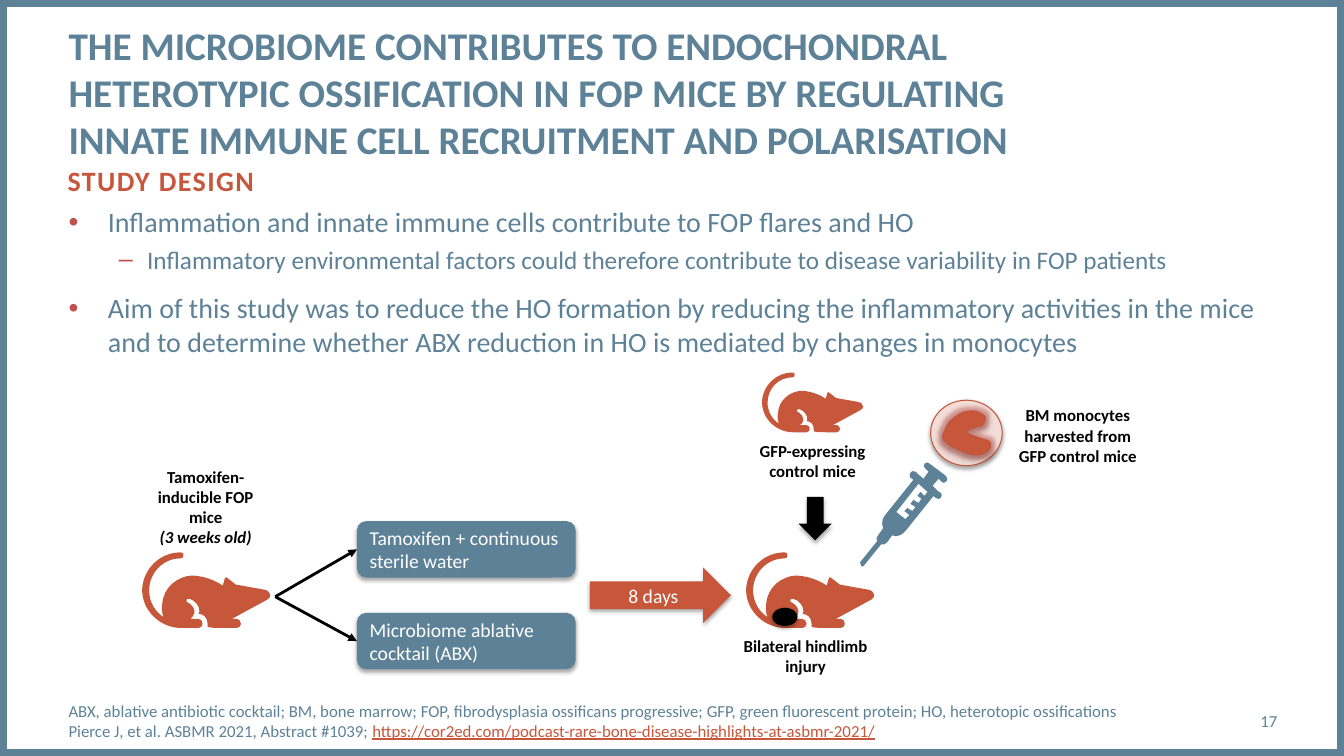
from lxml.etree import SubElement
from pptx import Presentation
from pptx.dml.color import RGBColor
from pptx.enum.shapes import MSO_CONNECTOR, MSO_SHAPE
from pptx.enum.text import MSO_ANCHOR, PP_ALIGN
from pptx.oxml.ns import qn
from pptx.util import Inches, Pt

BLUE, RUST, BLACK, WHITE = "5D8298", "C6573B", "000000", "FFFFFF"
HEADING, BULLET, CELL, NUCLEUS_EDGE = "C7573C", "C0504D", "F4DDD8", "C55336"

MOUSE = """M 122 39 L 94 34 L 85 27 C 84 26 83 27 83 28 L 81 35 C 74 30 64 26 52 25
C 36 25 22 37 21 53 C 20 58 21 62 22 66 C 14 61 8 51 8 40 C 8 22 22 8 39 8 C 41 8 42 7 42 5
C 43 3 41 2 39 2 C 19 2 2 18 1 39 C 1 60 19 77 40 77 L 57 77 C 59 77 61 75 61 73
C 61 70 59 68 57 68 L 49 68 C 51 66 53 64 53 61 C 53 57 50 54 47 52 C 45 52 45 51 45 49
C 45 48 47 48 48 48 C 54 50 58 55 58 61 C 58 61 57 62 57 63 C 62 63 66 67 66 73
C 66 74 66 75 66 76 C 70 77 75 77 81 77 L 95 77 C 97 77 99 75 99 73 C 99 70 97 68 95 68
L 90 68 L 125 49 C 127 48 128 46 128 45 C 128 42 125 39 122 39"""
SYRINGE = """M 64 34 L 60 30 L 57 34 L 61 37 L 58 41 L 53 38 L 50 42 L 55 45 L 52 49 L 47 46
L 44 49 L 49 53 L 45 57 L 36 50 L 58 22 L 67 30 L 64 34
M 85 14 L 69 2 C 68 0 66 1 64 2 C 63 4 63 6 65 7 L 68 10 L 63 17 L 57 12 L 55 10
C 53 9 51 9 50 11 C 49 13 49 15 50 16 L 53 18 L 25 53 C 23 55 22 59 22 62
C 22 63 23 65 23 66 L 18 73 C 16 75 16 77 17 79 L 0 100 C 0 101 0 102 1 103
C 1 104 2 104 3 104 C 3 104 4 103 4 103 L 21 82 C 23 83 25 82 27 80 L 32 73
C 34 74 35 74 36 74 C 40 73 43 72 45 69 L 73 34 L 75 36 C 76 37 77 37 78 37
C 79 37 80 36 80 36 C 82 34 81 32 80 31 L 77 29 L 72 24 L 78 17 L 81 20
C 82 21 83 21 83 21 C 84 21 85 20 86 19 C 87 18 87 16 85 14"""
NUCLEUS = """M 24 22 C 22 21 27 19 29 18 C 32 16 37 16 39 15 C 41 13 43 9 42 6
C 40 4 35 1 32 1 C 28 0 24 1 20 2 C 16 4 11 7 7 11 C 4 15 1 22 0 25 C 0 29 1 30 4 32
C 6 35 11 37 16 39 C 20 41 26 44 31 44 C 35 45 41 43 44 41 C 47 39 48 35 47 32
C 46 30 42 29 38 28 C 35 27 25 24 24 22"""


def color(hex_string):
    """Turn a hex string into a colour."""
    return RGBColor.from_string(hex_string)


def set_font(font, size, hex_string, bold=None):
    """Set the face, size, colour and weight of a font."""
    font.name, font.size, font.bold = "Calibri", Pt(size), bold
    font.color.rgb = color(hex_string)


def add_effect(effects, tag, hex_string, alpha, **settings):
    """Append a coloured effect to an effect list."""
    effect = SubElement(effects, qn(tag), settings)
    tint = SubElement(effect, qn("a:srgbClr"), val=hex_string)
    SubElement(tint, qn("a:alpha"), val=str(alpha * 1000))


def style(shape, fill, line=None, shadow=True, glow=None):
    """Give a shape its fill, outline and effects."""
    shape.shadow.inherit = False
    shape.fill.solid()
    shape.fill.fore_color.rgb = color(fill)
    if line:
        shape.line.color.rgb, shape.line.width = color(line), Pt(0.75)
    else:
        shape.line.fill.background()
    effects = shape._element.spPr.find(qn("a:effectLst"))
    if glow:
        add_effect(effects, "a:glow", glow, 40, rad=str(Pt(5)))
    if shadow:
        add_effect(effects, "a:outerShdw", BLACK, 35, blurRad=str(Pt(3.1)),
                   dist=str(Pt(1.8)), dir="5400000", rotWithShape="0")
    return shape


def add_preset(slide, kind, box, fill, line=None, shadow=True):
    """Draw a preset shape in a box."""
    shape = slide.shapes.add_shape(kind, *map(Inches, box))
    return style(shape, fill, line, shadow)


def write_on(shape, text, align):
    """Write white text on a shape."""
    frame = shape.text_frame
    frame.word_wrap, frame.vertical_anchor = True, MSO_ANCHOR.MIDDLE
    paragraph = frame.paragraphs[0]
    paragraph.text, paragraph.alignment = text, align
    set_font(paragraph.font, 14, WHITE)


def read_outline(outline):
    """Split a path in hundredths of an inch into commands with their points."""
    tokens = iter(outline.split())
    for command in tokens:
        numbers = [int(next(tokens)) for _ in range(6 if command == "C" else 2)]
        yield command, list(zip(numbers[::2], numbers[1::2]))


def add_outline(slide, outline, left, top, size=1):
    """Draw a curved freeform with its origin at the given corner."""
    (_, start), *segments = read_outline(outline)
    builder = slide.shapes.build_freeform(*start[0], scale=Inches(size) / 100)
    for command, points in segments:
        if command == "M":
            builder.move_to(*points[0])
        else:
            builder.add_line_segments(points, close=False)
    shape = builder.convert_to_shape(Inches(left), Inches(top))
    path = next(shape._element.iter(qn("a:path")))
    steps = iter(list(path)[1:])
    for command, points in segments:
        nodes = [next(steps) for _ in points]
        if command == "C":
            curve = path.makeelement(qn("a:cubicBezTo"))
            nodes[0].addprevious(curve)
            for node in nodes:
                curve.append(node[0])
                path.remove(node)
        elif command == "M":
            nodes[0].addprevious(path.makeelement(qn("a:close")))
    SubElement(path, qn("a:close"))
    return shape


def add_text(slide, box, texts, size, fill, bold=None, align=PP_ALIGN.LEFT,
             inset=0, anchor=MSO_ANCHOR.TOP):
    """Place a wrapped text box and return its paragraphs."""
    frame = slide.shapes.add_textbox(*map(Inches, box)).text_frame
    frame.word_wrap, frame.vertical_anchor = True, anchor
    frame.margin_left = frame.margin_right = Inches(inset)
    frame.margin_top = frame.margin_bottom = Inches(inset / 2)
    for index, text in enumerate(texts):
        paragraph = frame.add_paragraph() if index else frame.paragraphs[0]
        paragraph.add_run().text = text
        paragraph.alignment = align
        set_font(paragraph.font, size, fill, bold)
    return frame.paragraphs


def add_label(slide, left, top, height, *texts):
    """Place a bold, centred diagram label."""
    return add_text(slide, (left, top, 1.5, height), texts, 12, BLACK, True,
                    PP_ALIGN.CENTER, 0.1)


def add_header(slide, left, top):
    """Place the title and the section heading."""
    add_text(slide, (left, top, 9.56, 0.94), [
        "THE MICROBIOME CONTRIBUTES TO ENDOCHONDRAL HETEROTYPIC OSSIFICATION IN FOP MICE "
        "BY REGULATING INNATE IMMUNE CELL RECRUITMENT AND POLARISATION"], 28, BLUE, True)
    heading, = add_text(slide, (left - 0.01, top + 1.41, 12, 0.77), ["STUDY DESIGN"],
                        20, HEADING, True)
    heading.runs[0]._r.get_or_add_rPr().set("spc", "100")


def add_bullets(slide, box):
    """Place the bulleted study aims."""
    items = [
        (0, "Inflammation and innate immune cells contribute to FOP flares and HO"),
        (1, "Inflammatory environmental factors could therefore contribute to disease "
            "variability in FOP patients"),
        (0, "Aim of this study was to reduce the HO formation by reducing the inflammatory "
            "activities in the mice and to determine whether ABX reduction in HO is mediated "
            "by changes in monocytes")]
    frame = slide.shapes.add_textbox(*map(Inches, box)).text_frame
    frame.word_wrap = True
    frame.margin_left = frame.margin_right = frame.margin_top = frame.margin_bottom = 0
    for index, (level, text) in enumerate(items):
        paragraph = frame.add_paragraph() if index else frame.paragraphs[0]
        paragraph.text, paragraph.level = text, level
        margin, hanging, mark, size, gap = ((0.39, 0.39, "•", 20, 12),
                                            (0.78, 0.28, "–", 18, 4))[level]
        properties = paragraph._p.get_or_add_pPr()
        properties.set("marL", str(Inches(margin)))
        properties.set("indent", str(-Inches(hanging)))
        SubElement(SubElement(properties, qn("a:buClr")), qn("a:srgbClr"), val=BULLET)
        SubElement(properties, qn("a:buFont"), typeface="Arial")
        SubElement(properties, qn("a:buChar"), char=mark)
        if index:
            paragraph.space_before = Pt(gap)
        set_font(paragraph.font, size, BLUE)


def add_treatments(slide, left, top):
    """Draw the first mouse, its label and the two treatment arms."""
    style(add_outline(slide, MOUSE, left, top), RUST, shadow=False)
    _, age = add_label(slide, left - 0.11, top - 0.88, 0.91,
                       "Tamoxifen-inducible FOP mice", "(3 weeks old)")
    age.font.italic = True
    arms = ["Tamoxifen + continuous sterile water", "Microbiome ablative cocktail (ABX)"]
    for row, text in enumerate(arms):
        arm = add_preset(slide, MSO_SHAPE.ROUNDED_RECTANGLE,
                         (left + 2.14, top - 0.29 + 0.91 * row, 2.17, 0.56), BLUE)
        write_on(arm, text, PP_ALIGN.LEFT)
        start = Inches(left + 1.33), Inches(top + 0.46)
        arrow = slide.shapes.add_connector(MSO_CONNECTOR.STRAIGHT, *start, *start)
        arrow.end_connect(arm, 1)
        arrow.line.color.rgb, arrow.line.width = color(BLACK), Pt(2)
        SubElement(arrow.line._get_or_add_ln(), qn("a:tailEnd"), type="triangle")
        SubElement(arrow._element.spPr, qn("a:effectLst"))
    days = add_preset(slide, MSO_SHAPE.RIGHT_ARROW, (left + 4.45, top + 0.17, 1.4, 0.55), RUST)
    write_on(days, "8 days", PP_ALIGN.CENTER)


def add_injury(slide, left, top):
    """Draw the injured mouse, the donor mouse, the monocyte and the syringe."""
    style(add_outline(slide, MOUSE, left, top), RUST, shadow=False)
    add_preset(slide, MSO_SHAPE.OVAL, (left + 0.27, top + 0.57, 0.25, 0.18), BLACK)
    add_label(slide, left - 0.15, top + 0.8, 0.5, "Bilateral hindlimb injury")
    style(add_outline(slide, MOUSE, left + 0.16, top - 1.78, 0.79), RUST, shadow=False)
    add_label(slide, left - 0.08, top - 1.14, 0.5, "GFP-expressing control mice")
    down = add_preset(slide, MSO_SHAPE.RIGHT_ARROW, (left + 0.48, top - 0.48, 0.43, 0.33), BLACK)
    down.rotation = 90
    style(add_outline(slide, SYRINGE, left + 1.14, top - 0.88), BLUE, shadow=False)
    add_preset(slide, MSO_SHAPE.OVAL, (left + 1.84, top - 1.49, 0.71, 0.65), CELL, RUST)
    style(add_outline(slide, NUCLEUS, left + 1.96, top - 1.39), RUST, NUCLEUS_EDGE, glow=BULLET)
    add_label(slide, left + 2.55, top - 1.49, 0.71,
              "BM monocytes harvested from GFP control mice")


def add_footer(slide, left, top):
    """Place the abbreviations, the reference and the slide number."""
    _, reference = add_text(slide, (left, top, 10.79, 0.4), [
        "ABX, ablative antibiotic cocktail; BM, bone marrow; FOP, fibrodysplasia ossificans "
        "progressive; GFP, green fluorescent protein; HO, heterotopic ossifications",
        "Pierce J, et al. ASBMR 2021, Abstract #1039; "], 12, BLUE, anchor=MSO_ANCHOR.MIDDLE)
    address = reference.add_run()
    address.text = "https://cor2ed.com/podcast-rare-bone-disease-highlights-at-asbmr-2021/"
    address.font.color.rgb, address.font.underline = color(RUST), True
    add_text(slide, (left + 10.82, top, 1.17, 0.4), ["17"], 12, BLUE,
             align=PP_ALIGN.RIGHT, anchor=MSO_ANCHOR.MIDDLE)


def main():
    """Build the slide and save it."""
    presentation = Presentation()
    presentation.slide_width, presentation.slide_height = Inches(13.33), Inches(7.5)
    slide = presentation.slides.add_slide(presentation.slide_layouts[6])
    border = add_preset(slide, MSO_SHAPE.RECTANGLE, (0, 0, 13.33, 7.5), WHITE, BLUE, False)
    border.fill.background()
    border.line.width = Pt(10)
    add_header(slide, 0.68, 0.21)
    add_bullets(slide, (0.68, 2.03, 11.99, 1.72))
    add_treatments(slide, 1.4, 5.46)
    add_injury(slide, 7.39, 5.46)
    add_footer(slide, 0.68, 6.95)
    presentation.save("out.pptx")


if __name__ == "__main__":
    main()
